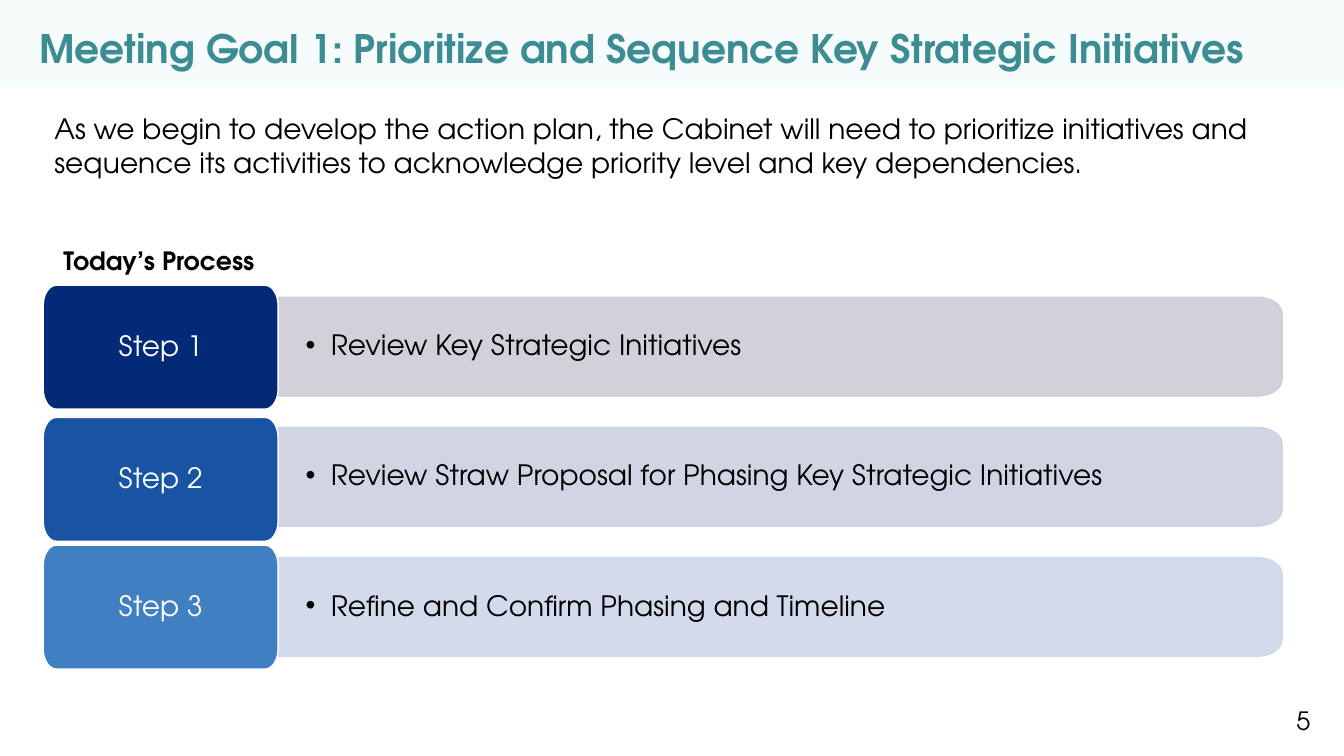
"""Builds the slide on the meeting goal and its three process steps."""
import math

from lxml import etree
from pptx import Presentation
from pptx import util as u
from pptx.dml.color import RGBColor
from pptx.enum import shapes, text
from pptx.oxml import ns

TITLE = "Meeting Goal 1: Prioritize and Sequence Key Strategic Initiatives"
INTRO = (
    "As we begin to develop the action plan, the Cabinet will need to prioritize "
    "initiatives and sequence its activities to acknowledge priority level and "
    "key dependencies."
)
PROCESS = "Today’s Process"
PAGE = "5"
STEPS = [
    ("Step 1", "Review Key Strategic Initiatives", 7.19),
    ("Step 2", "Review Straw Proposal for Phasing Key Strategic Initiatives", 10.52),
    ("Step 3", "Refine and Confirm Phasing and Timeline", 13.74),
]
COLOURS = {
    "band": "A9D8DC", "title": "3C8C93", "ink": "000000", "white": "FFFFFF",
    "Step 1": "032A77", "Step 2": "1953A4", "Step 3": "3F7FC2",
    "Step 1 bar": "CCCDD6", "Step 2 bar": "CDD1E0", "Step 3 bar": "CFD7E9",
}
FONT = "TeX Gyre Adventor"
TAB_LEFT, TAB_WIDTH, TAB_HEIGHT = 1.09, 5.92, 3.12
BAR_LEFT, BAR_WIDTH, BAR_HEIGHT = 7.01, 25.3, 2.49
BAR_TOP, BAR_PITCH = 7.49, 3.28
TAB_CORNER, BAR_CORNER = (0.33, 0.51), (0.64, 0.41)


def colour(name):
    return RGBColor.from_string(COLOURS[name])


def fade(fill, percent):
    for tint in fill._xPr.iter(ns.qn("a:srgbClr")):
        etree.SubElement(tint, ns.qn("a:alpha"), val=str(percent * 1000))


def write(holder, words, size, ink="ink", bold=False, align=text.PP_ALIGN.LEFT,
          anchor=text.MSO_ANCHOR.TOP, spacing=1.0, margins=(0.25, 0.13, 0.25, 0.13),
          bullet=None):
    frame = holder.text_frame
    frame.word_wrap = True
    frame.auto_size = text.MSO_AUTO_SIZE.NONE
    frame.vertical_anchor = anchor
    (frame.margin_left, frame.margin_top,
     frame.margin_right, frame.margin_bottom) = map(u.Cm, margins)
    frame.text = words
    paragraph = frame.paragraphs[0]
    paragraph.alignment = align
    paragraph.line_spacing = spacing
    paragraph.space_before = u.Pt(0)
    properties = paragraph._p.get_or_add_pPr()
    indent = u.Cm(0.64) if bullet else 0
    properties.set("marL", str(indent))
    properties.set("indent", str(-indent))
    if bullet:
        etree.SubElement(properties, ns.qn("a:buFont"), typeface="Arial")
        etree.SubElement(properties, ns.qn("a:buChar"), char=bullet)
    else:
        etree.SubElement(properties, ns.qn("a:buNone"))
    font = paragraph.font
    font.name, font.size, font.bold = FONT, u.Pt(size), bold
    font.color.rgb = colour(ink)


def place(holder, left, top, width, height):
    holder.left, holder.top = u.Cm(left), u.Cm(top)
    holder.width, holder.height = u.Cm(width), u.Cm(height)


def add_panel(slide, left, top, width, height, right_corner, left_corner, fill, line):
    right, bottom = left + width, top + height
    (rx, ry), (lx, ly) = right_corner, left_corner
    corners = [
        (right - rx, top + ry, rx, ry, -90), (right - rx, bottom - ry, rx, ry, 0),
        (left + lx, bottom - ly, lx, ly, 90), (left + lx, top + ly, lx, ly, 180),
    ]
    outline = [
        (u.Cm(x + a * math.cos(math.radians(start + turn))),
         u.Cm(y + b * math.sin(math.radians(start + turn))))
        for x, y, a, b, start in corners
        for turn in (range(0, 91, 10) if a else [0])
    ]
    builder = slide.shapes.build_freeform(*outline[0])
    builder.add_line_segments(outline[1:], close=True)
    panel = builder.convert_to_shape()
    panel.shadow.inherit = False
    panel.fill.solid()
    panel.fill.fore_color.rgb = colour(fill)
    panel.line.color.rgb = colour(line)
    panel.line.width = u.Pt(1)
    return panel


def main():
    deck = Presentation()
    deck.slide_width, deck.slide_height = u.Cm(33.87), u.Cm(19.05)
    slide = deck.slides.add_slide(deck.slide_layouts[1])
    title, intro = slide.placeholders

    band = slide.shapes.add_shape(
        shapes.MSO_SHAPE.RECTANGLE, 0, 0, deck.slide_width, u.Cm(2.18))
    band.shadow.inherit = False
    band.fill.solid()
    band.fill.fore_color.rgb = colour("band")
    fade(band.fill, 10)
    band.line.fill.background()
    title._element.addprevious(band._element)

    place(title, 0.74, 0.61, 31.72, 1.6)
    write(title, TITLE, 28, "title", bold=True, spacing=0.9)
    place(intro, 1.12, 2.69, 31.72, 1.96)
    write(intro, INTRO, 20)

    for row, (step, task, tab_top) in enumerate(STEPS):
        shade = f"{step} bar"
        bar = add_panel(slide, BAR_LEFT, BAR_TOP + row * BAR_PITCH, BAR_WIDTH,
                        BAR_HEIGHT, BAR_CORNER, (0, 0), shade, shade)
        fade(bar.fill, 90)
        write(bar, task, 20, anchor=text.MSO_ANCHOR.MIDDLE, spacing=0.9,
              margins=(0.69, 0.48, 0.84, 0.48), bullet="•")
        tab = add_panel(slide, TAB_LEFT, tab_top, TAB_WIDTH, TAB_HEIGHT,
                        TAB_CORNER, TAB_CORNER, step, "white")
        write(tab, step, 20, "white", align=text.PP_ALIGN.CENTER,
              anchor=text.MSO_ANCHOR.MIDDLE, spacing=0.9,
              margins=(0.41, 0.28, 0.41, 0.28))

    page = slide.shapes.add_textbox(u.Cm(29.54), u.Cm(17.65), u.Cm(3.73), u.Cm(1.02))
    write(page, PAGE, 18, align=text.PP_ALIGN.RIGHT)
    process = slide.shapes.add_textbox(u.Cm(1.35), u.Cm(6.05), u.Cm(31.72), u.Cm(1.02))
    write(process, PROCESS, 18, bold=True)

    deck.save("out.pptx")


if __name__ == "__main__":
    main()
